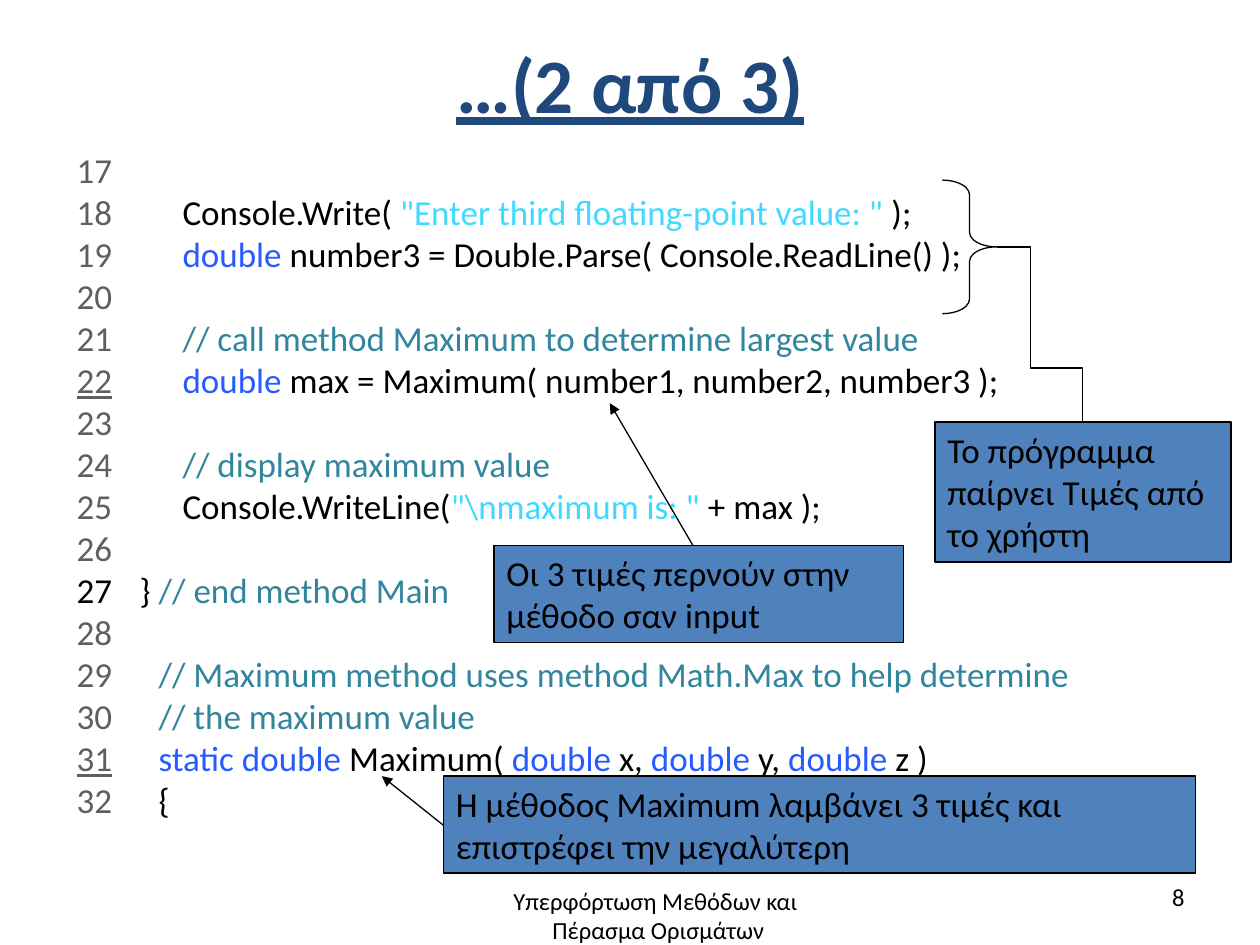
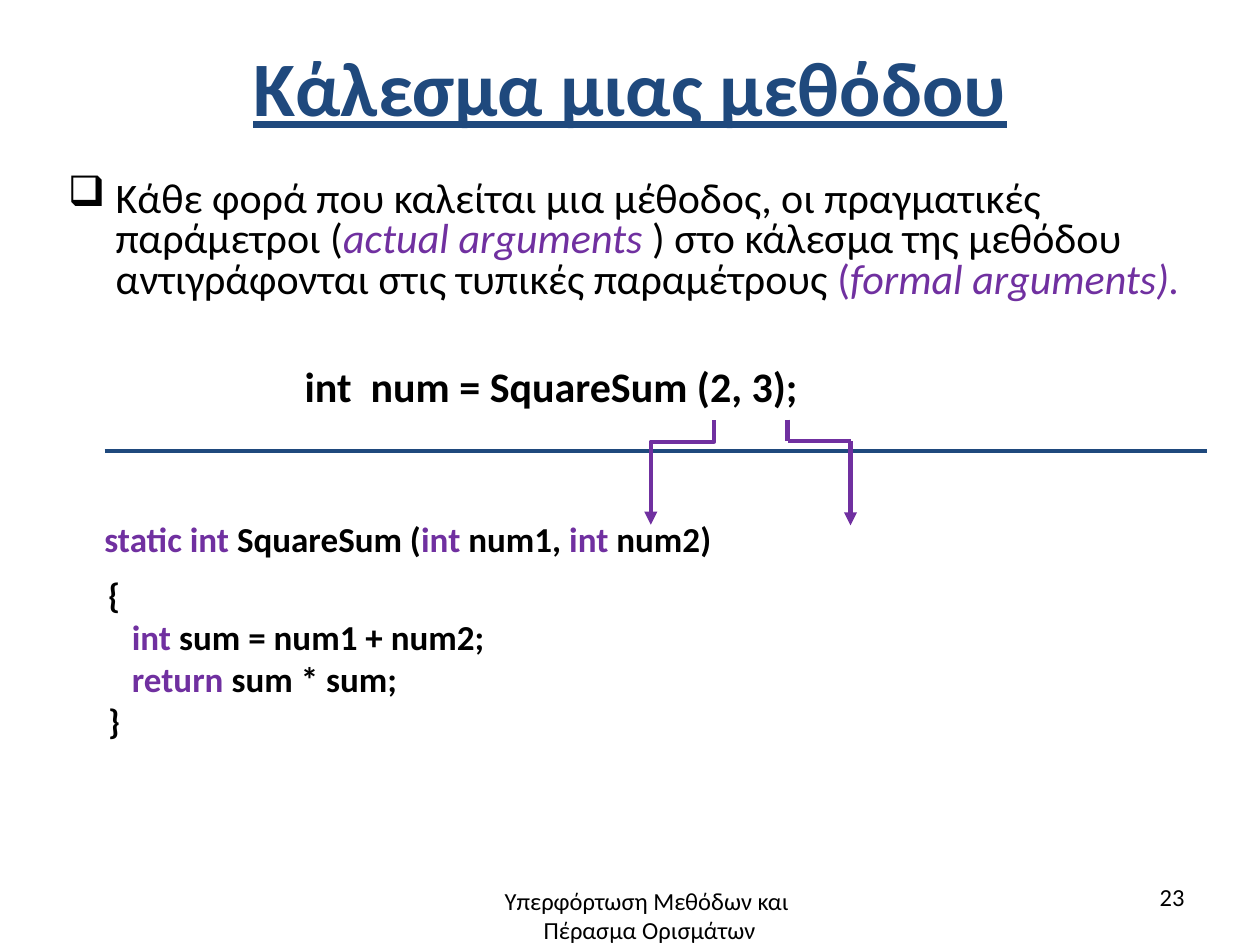
"""Build two lecture slides on passing arguments to methods."""
from lxml import etree
from pptx import Presentation
from pptx.dml.color import RGBColor
from pptx.enum.shapes import MSO_CONNECTOR, MSO_SHAPE
from pptx.enum.text import MSO_ANCHOR, PP_ALIGN
from pptx.oxml.ns import qn
from pptx.util import Pt

PX = 9144
FONT = "Calibri"
LEFT, CENTER, RIGHT = PP_ALIGN.LEFT, PP_ALIGN.CENTER, PP_ALIGN.RIGHT
TOP, MIDDLE = MSO_ANCHOR.TOP, MSO_ANCHOR.MIDDLE
STRAIGHT, ELBOW = MSO_CONNECTOR.STRAIGHT, MSO_CONNECTOR.ELBOW
RECTANGLE, BRACE = MSO_SHAPE.RECTANGLE, MSO_SHAPE.RIGHT_BRACE
COLORS = {
    "black": "000000",
    "navy": "1F497D",
    "callout": "4F81BD",
    "number": "5F5F5F",
    "string": "40D9FF",
    "keyword": "275AFF",
    "comment": "31859C",
    "purple": "7030A0",
}
RGB = {name: RGBColor.from_string(value) for name, value in COLORS.items()}


def add_text(page, at, paragraphs, size, align=LEFT, anchor=TOP, wrap=True, fill=None):
    """Add a box of paragraphs; each span is text, colour and style letters."""
    place = [PX * length for length in at]
    if fill:
        box = page.shapes.add_shape(RECTANGLE, *place)
        box.shadow.inherit = False
        box.fill.solid()
        box.fill.fore_color.rgb = RGB[fill]
        box.line.color.rgb = RGB["black"]
        box.line.width = Pt(0.75)
    else:
        box = page.shapes.add_textbox(*place)
    frame = box.text_frame
    frame.word_wrap = wrap
    frame.vertical_anchor = anchor
    for index, spans in enumerate(paragraphs):
        para = frame.add_paragraph() if index else frame.paragraphs[0]
        para.alignment = align
        for text, color, style in spans:
            span = para.add_run()
            span.text = text
            span.font.name = FONT
            span.font.size = Pt(size)
            span.font.color.rgb = RGB[color]
            span.font.bold = "b" in style
            span.font.italic = "i" in style
            span.font.underline = "u" in style
    return frame


def add_line(page, ends, color, width, arrow=False, bend=None, adjust=(), turn=0):
    """Add a straight line, or a bent one with the given preset and adjustments."""
    line = page.shapes.add_connector(ELBOW if bend else STRAIGHT, *[PX * end for end in ends])
    line.line.color.rgb = RGB[color]
    line.line.width = Pt(width)
    properties = line._element.spPr
    if arrow:
        etree.SubElement(line.line._get_or_add_ln(), qn("a:tailEnd"), type="triangle")
    etree.SubElement(properties, qn("a:effectLst"))
    if bend:
        properties.find(qn("a:xfrm")).set("rot", str(turn * 60000))
        geometry = properties.find(qn("a:prstGeom"))
        geometry.set("prst", bend)
        guides = geometry.find(qn("a:avLst"))
        for number, value in enumerate(adjust, 1):
            etree.SubElement(guides, qn("a:gd"), name=f"adj{number}", fmla=f"val {value}")


deck = Presentation()
deck.slide_width, deck.slide_height = 1000 * PX, 750 * PX
pages = []
for title, title_at, number, footer_left in [
    ("…(2 από 3)", (50, 3, 900, 125), "8", 348),
    ("Κάλεσμα μιας μεθόδου", (50, -3, 900, 142), "23", 341),
]:
    page = deck.slides.add_slide(deck.slide_layouts[6])
    add_text(page, title_at, [[(title, "navy", "bu")]], 44, CENTER, MIDDLE)
    footer = [[(text, "black", "")] for text in ("Υπερφόρτωση Μεθόδων και ", "Πέρασμα Ορισμάτων")]
    add_text(page, (footer_left, 698, 349, 55), footer, 14, CENTER)
    add_text(page, (717, 695, 233, 40), [[(number, "black", "")]], 14, RIGHT)
    pages.append(page)
listing_page, call_page = pages

FIRST_NUMBER, LIST_NUMBER, UNDERLINED = 17, 27, (22, 31)
BODY_TAB, MEMBER_TAB, LIST_INDENT = 84, 65, 50
listing = [
    [],
    [("Console.Write( ", "black"), ('"Enter third floating-point value: "', "string"), (" );", "black")],
    [("double", "keyword"), (" number3 = Double.Parse( Console.ReadLine() );", "black")],
    [],
    [("// call method Maximum to determine largest value", "comment")],
    [("double", "keyword"), (" max = Maximum( number1, number2, number3 );", "black")],
    [],
    [("// display maximum value", "comment")],
    [("Console.WriteLine(", "black"), ('"\\nmaximum is: "', "string"), (" + max );", "black")],
    [],
    [("} ", "black"), ("// end method Main", "comment")],
    [],
    [("// Maximum method uses method Math.Max to help determine", "comment")],
    [("// the maximum value", "comment")],
    [("static double", "keyword"), (" Maximum( ", "black"), ("double", "keyword"), (" x, ", "black"),
     ("double", "keyword"), (" y, ", "black"), ("double", "keyword"), (" z )", "black")],
    [("{", "black")],
]
paragraphs = []
for number, code in enumerate(listing, FIRST_NUMBER):
    spans = [(text, color, "") for text, color in code]
    if number != LIST_NUMBER:
        gap = [("\t", "number", "")] if code else []
        spans = [(str(number), "number", "u" if number in UNDERLINED else ""), *gap, *spans]
    paragraphs.append(spans)
frame = add_text(listing_page, (51, 113, 899, 549), paragraphs, 20)
for number, para in enumerate(frame.paragraphs, FIRST_NUMBER):
    properties = para._p.get_or_add_pPr()
    if number == LIST_NUMBER:
        properties.set("marL", str(LIST_INDENT * PX))
        properties.set("indent", str(-LIST_INDENT * PX))
        etree.SubElement(properties, qn("a:buAutoNum"), type="arabicPlain", startAt=str(number))
    elif listing[number - FIRST_NUMBER]:
        stop = BODY_TAB if number < LIST_NUMBER else MEMBER_TAB
        tabs = etree.SubElement(properties, qn("a:tabLst"))
        etree.SubElement(tabs, qn("a:tab"), pos=str(stop * PX), algn="l")

brace = listing_page.shapes.add_shape(BRACE, *[PX * length for length in (748, 143, 43, 106)])
brace.shadow.inherit = False
brace.fill.background()
brace.line.color.rgb = RGB["black"]
brace.line.width = Pt(0.75)
brace.adjustments[0] = 0.27
add_line(listing_page, (791, 196, 859, 335), "black", 0.75,
         bend="bentConnector4", adjust=(39900, 69100))
for at, text in [
    ((742, 335, 235, 111), "Το πρόγραμμα παίρνει Τιμές από το χρήστη"),
    ((392, 433, 325, 77), "Οι 3 τιμές περνούν στην μέθοδο σαν input"),
    ((352, 616, 597, 77), "H μέθοδος Maximum λαμβάνει 3 τιμές και επιστρέφει την μεγαλύτερη"),
]:
    add_text(listing_page, at, [[(text, "black", "")]], 20, fill="callout")
for ends in [(550, 433, 484, 320), (352, 655, 303, 616)]:
    add_line(listing_page, ends, "black", 0.75, arrow=True)

explanation = [
    ("Κάθε φορά που καλείται μια μέθοδος, οι πραγματικές παράμετροι (", "black", ""),
    ("actual arguments ", "purple", "i"),
    (") στο κάλεσμα της μεθόδου αντιγράφονται στις τυπικές παραμέτρους ", "black", ""),
    ("(", "purple", ""),
    ("formal arguments).", "purple", "i"),
]
frame = add_text(call_page, (44, 139, 906, 108), [explanation], 24)
para = frame.paragraphs[0]
properties = para._p.get_or_add_pPr()
properties.set("marL", str(38 * PX))
properties.set("indent", str(-38 * PX))
etree.SubElement(properties, qn("a:buChar"), char="❑")
para.line_spacing = 0.8

call = [[("int  num = SquareSum (2, 3);", "black", "b")]]
signature = [[
    ("static int ", "purple", "b"), ("SquareSum (", "black", "b"), ("int ", "purple", "b"),
    ("num1, ", "black", "b"), ("int ", "purple", "b"), ("num2)", "black", "b"),
]]
method_body = [
    [("{", "black", "b")],
    [("   int ", "purple", "b"), ("sum = num1 + num2;", "black", "b")],
    [("   return", "purple", "b"), (" sum * sum;", "black", "b")],
    [("}", "black", "b")],
]
for at, code, size in [
    ((232, 281, 415, 50), call, 24),
    ((73, 406, 505, 44), signature, 20),
    ((76, 450, 321, 145), method_body, 20),
]:
    add_text(call_page, at, code, size, wrap=False)

add_line(call_page, (83, 358, 958, 358), "navy", 2.5)
add_line(call_page, (500, 350, 583, 400), "purple", 2.5, arrow=True,
         bend="bentConnector3", adjust=(20600,), turn=90)
for ends, arrow in [
    ((625, 333, 625, 350), False),
    ((675, 350, 625, 350), False),
    ((675, 350, 675, 417), True),
]:
    add_line(call_page, ends, "purple", 2.5, arrow)

deck.save("out.pptx")
